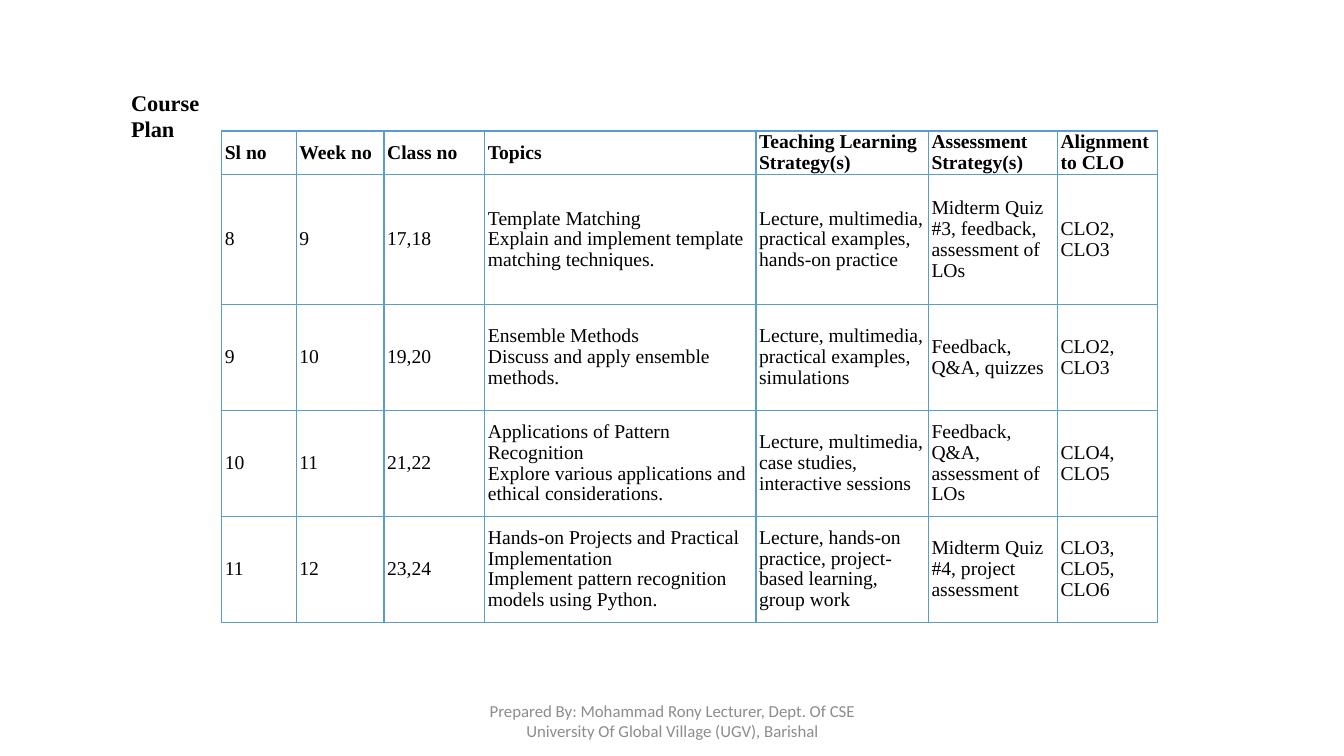
"""Build the course plan slide on a grid of 100 columns by 100 rows."""
import pptx
import pptx.dml.color
import pptx.enum.text
import pptx.oxml
import pptx.oxml.ns
import pptx.util

BLACK = pptx.dml.color.RGBColor(0x00, 0x00, 0x00)
GRAY = pptx.dml.color.RGBColor(0x8C, 0x8C, 0x8C)
BLUE = pptx.dml.color.RGBColor(0x5B, 0x9B, 0xD5)
SERIF = "Times New Roman"
SANS = "Calibri"
WIDE = pptx.util.Inches(13.33)
HIGH = pptx.util.Inches(7.5)
MIDDLE = pptx.enum.text.MSO_ANCHOR.MIDDLE
CENTER = pptx.enum.text.PP_ALIGN.CENTER

COLS = [5.55, 6.53, 7.5, 20.18, 12.83, 9.6, 7.43]
ROWS = [4.27, 17.2, 14, 14, 14]
PLAN = [
    ["Sl no", "Week no", "Class no", "Topics", "Teaching Learning Strategy(s)",
     "Assessment Strategy(s)", "Alignment to CLO"],
    ["8", "9", "17,18",
     "Template Matching\nExplain and implement template matching techniques.",
     "Lecture, multimedia, practical examples, hands-on practice",
     "Midterm Quiz #3, feedback, assessment of LOs", "CLO2, CLO3"],
    ["9", "10", "19,20",
     "Ensemble Methods\nDiscuss and apply ensemble methods.",
     "Lecture, multimedia, practical examples, simulations",
     "Feedback, Q&A, quizzes", "CLO2, CLO3"],
    ["10", "11", "21,22",
     "Applications of Pattern Recognition\n"
     "Explore various applications and ethical considerations.",
     "Lecture, multimedia, case studies, interactive sessions",
     "Feedback, Q&A, assessment of LOs", "CLO4, CLO5"],
    ["11", "12", "23,24",
     "Hands-on Projects and Practical Implementation\n"
     "Implement pattern recognition models using Python.",
     "Lecture, hands-on practice, project-based learning, group work",
     "Midterm Quiz #4, project assessment", "CLO3, CLO5, CLO6"],
]


def across(cols):
    """Turn grid columns into a length."""
    return int(WIDE * cols / 100)


def down(rows):
    """Turn grid rows into a length."""
    return int(HIGH * rows / 100)


def write(frame, text, size=14, face=SERIF, color=BLACK, bold=False,
          align=None, space=None):
    """Fill a text frame, one paragraph per line of text."""
    frame.text = text
    for para in frame.paragraphs:
        para.alignment = align
        para.line_spacing = space
        font = para.runs[0].font
        font.size = pptx.util.Pt(size)
        font.name = face
        font.bold = bold
        font.color.rgb = color


def label(slide, text, left, top, width, height, pad=0, wrap=False,
          anchor=None, **style):
    """Add a text box with equal side insets."""
    box = slide.shapes.add_textbox(
        across(left), down(top), across(width), down(height))
    frame = box.text_frame
    frame.margin_left = frame.margin_right = across(pad)
    frame.margin_top = frame.margin_bottom = 0
    frame.word_wrap = wrap
    frame.vertical_anchor = anchor
    write(frame, text, **style)


def edge(cell):
    """Draw a thin line on all four sides of a cell."""
    for side in ("lnL", "lnR", "lnT", "lnB"):
        cell._tc.get_or_add_tcPr().append(pptx.oxml.parse_xml(
            f'<a:{side} {pptx.oxml.ns.nsdecls("a")} w="12700"><a:solidFill>'
            f'<a:srgbClr val="{BLUE}"/></a:solidFill></a:{side}>'))


def grid(slide, left, top):
    """Add the plan table."""
    table = slide.shapes.add_table(
        len(ROWS), len(COLS), across(left), down(top),
        across(sum(COLS)), down(sum(ROWS))).table
    table.first_row = table.horz_banding = False
    for col, width in zip(table.columns, COLS):
        col.width = across(width)
    for row, height, texts in zip(table.rows, ROWS, PLAN):
        row.height = down(height)
        for cell, text in zip(row.cells, texts):
            edge(cell)
            cell.fill.background()
            cell.vertical_anchor = MIDDLE
            cell.margin_left = pptx.util.Inches(0.03)
            cell.margin_right = pptx.util.Inches(0.01)
            cell.margin_top = cell.margin_bottom = pptx.util.Inches(0.01)
            write(cell.text_frame, text, bold=texts is PLAN[0], space=0.96)


def main():
    """Build and save the slide."""
    deck = pptx.Presentation()
    deck.slide_width, deck.slide_height = WIDE, HIGH
    slide = deck.slides.add_slide(deck.slide_layouts[6])
    grid(slide, 16.5, 17.33)
    label(slide, "Course Plan", 9.75, 11.73, 6.75, 2.13, size=16, bold=True)
    label(slide, "Prepared By: Mohammad Rony Lecturer, Dept. Of CSE "
          "University Of Global Village (UGV), Barishal",
          33.16, 92.67, 33.76, 5.33, pad=1.5, wrap=True, anchor=MIDDLE,
          size=12, face=SANS, color=GRAY, align=CENTER)
    deck.save("out.pptx")


if __name__ == "__main__":
    main()
